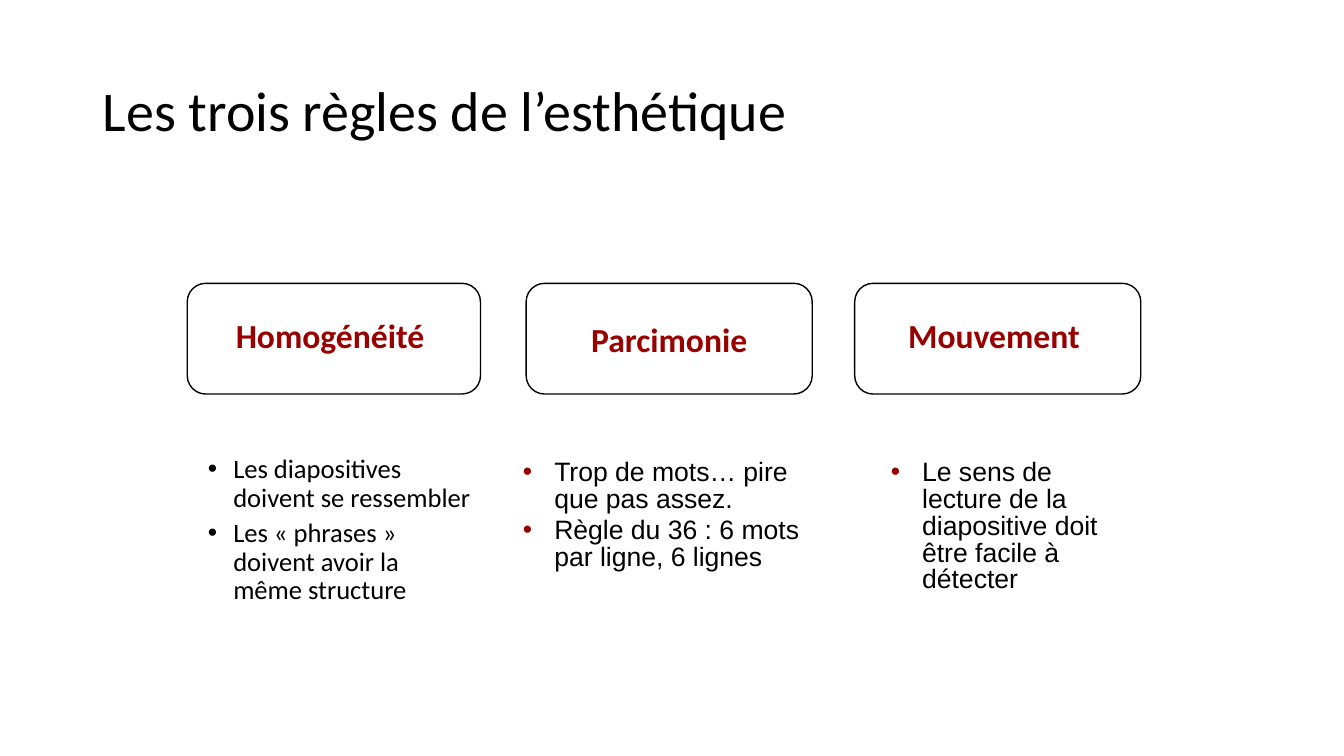
from dataclasses import dataclass
from lxml.etree import SubElement
from pptx import Presentation
from pptx.dml.color import RGBColor
from pptx.enum.shapes import MSO_SHAPE
from pptx.enum.text import MSO_ANCHOR, PP_ALIGN
from pptx.oxml.ns import qn
from pptx.slide import Slide
from pptx.text.text import _Paragraph
from pptx.util import Cm, Pt


@dataclass(frozen=True)
class Theme:
    ink: RGBColor = RGBColor(0, 0, 0)
    paper: RGBColor = RGBColor(255, 255, 255)
    accent: RGBColor = RGBColor(0x99, 0, 0)
    head: str = "Calibri"
    body: str = "Arial"
    title: int = 40
    card: int = 24
    item: int = 19


@dataclass(frozen=True)
class Card:
    text: str
    left: float
    width: float
    lead: float = 1.0


@dataclass(frozen=True)
class Notes:
    items: tuple[str, ...]
    left: float
    top: float
    width: float
    height: float
    inset: float
    font: str
    color: RGBColor
    indent: float
    hang: float
    lead: float
    gap: float


THEME = Theme()

CARDS = (
    Card("Homogénéité ", 4.72, 7.39, 0.8),
    Card("Parcimonie", 13.26, 7.21),
    Card("Mouvement ", 21.54, 7.21, 0.8),
)
CARD_TOP, CARD_HEIGHT = 7.14, 2.79

ARIAL = dict(top=10.52, inset=1.08, font=THEME.body, color=THEME.accent,
             indent=2.06, hang=0.79, lead=0.84, gap=3)
NOTES = (
    Notes(("Les diapositives doivent se ressembler",
           "Les « phrases » doivent avoir la \nmême structure"),
          left=3.73, top=10.31, width=8.61, height=5.99, inset=1.17,
          font=THEME.head, color=THEME.ink,
          indent=1.9, hang=0.64, lead=0.9, gap=4.5),
    Notes(("Trop de mots… pire que pas assez.",
           "Règle du 36 : 6 mots par ligne, 6 lignes"),
          left=11.66, width=9.22, height=4.19, **ARIAL),
    Notes(("Le sens de lecture de la diapositive doit être facile à détecter",),
          left=20.93, width=7.8, height=4.8, **ARIAL),
)


def write(para: _Paragraph, text: str, font: str, size: int,
          color: RGBColor, bold: bool = False) -> None:
    for row, line in enumerate(text.split("\n")):
        if row:
            para.add_line_break()
        run = para.add_run()
        run.text = line
        run.font.name = font
        run.font.size = Pt(size)
        run.font.bold = bold
        run.font.color.rgb = color


def mark(para: _Paragraph, notes: Notes) -> None:
    props = para._p.get_or_add_pPr()
    props.set("marL", str(Cm(notes.indent)))
    props.set("indent", str(-Cm(notes.hang)))
    tint = SubElement(props, qn("a:buClr"))
    SubElement(tint, qn("a:srgbClr"), val=str(notes.color))
    SubElement(props, qn("a:buFont"), typeface="Arial")
    SubElement(props, qn("a:buChar"), char="•")


def draw_title(slide: Slide, text: str) -> None:
    title = slide.shapes.title
    title.left, title.top = Cm(2.34), Cm(1.02)
    title.width, title.height = Cm(29.21), Cm(3.68)
    frame = title.text_frame
    frame.vertical_anchor = MSO_ANCHOR.MIDDLE
    para = frame.paragraphs[0]
    para.alignment = PP_ALIGN.LEFT
    para.line_spacing = 0.9
    write(para, text, THEME.head, THEME.title, THEME.ink)


def draw_card(slide: Slide, card: Card) -> None:
    box = slide.shapes.add_shape(
        MSO_SHAPE.ROUNDED_RECTANGLE, Cm(card.left), Cm(CARD_TOP),
        Cm(card.width), Cm(CARD_HEIGHT))
    box.shadow.inherit = False
    box.fill.solid()
    box.fill.fore_color.rgb = THEME.paper
    box.line.color.rgb = THEME.ink
    box.line.width = Pt(1)
    frame = box.text_frame
    frame.word_wrap = False
    frame.vertical_anchor = MSO_ANCHOR.MIDDLE
    para = frame.paragraphs[0]
    para.alignment = PP_ALIGN.CENTER
    para.line_spacing = card.lead
    write(para, card.text, THEME.head, THEME.card, THEME.accent, True)


def draw_notes(slide: Slide, notes: Notes) -> None:
    box = slide.shapes.add_textbox(
        Cm(notes.left), Cm(notes.top), Cm(notes.width), Cm(notes.height))
    frame = box.text_frame
    frame.word_wrap = True
    frame.margin_top = Cm(notes.inset)
    for rank, item in enumerate(notes.items):
        para = frame.add_paragraph() if rank else frame.paragraphs[0]
        para.level = 1
        para.line_spacing = notes.lead
        para.space_before = Pt(notes.gap if rank else 0)
        mark(para, notes)
        write(para, item, notes.font, THEME.item, THEME.ink)


def main() -> None:
    deck = Presentation()
    deck.slide_width, deck.slide_height = Cm(33.87), Cm(19.05)
    slide = deck.slides.add_slide(deck.slide_layouts.get_by_name("Title Only"))
    draw_title(slide, "Les trois règles de l’esthétique")
    for card in CARDS:
        draw_card(slide, card)
    for notes in NOTES:
        draw_notes(slide, notes)
    deck.save("out.pptx")


if __name__ == "__main__":
    main()
